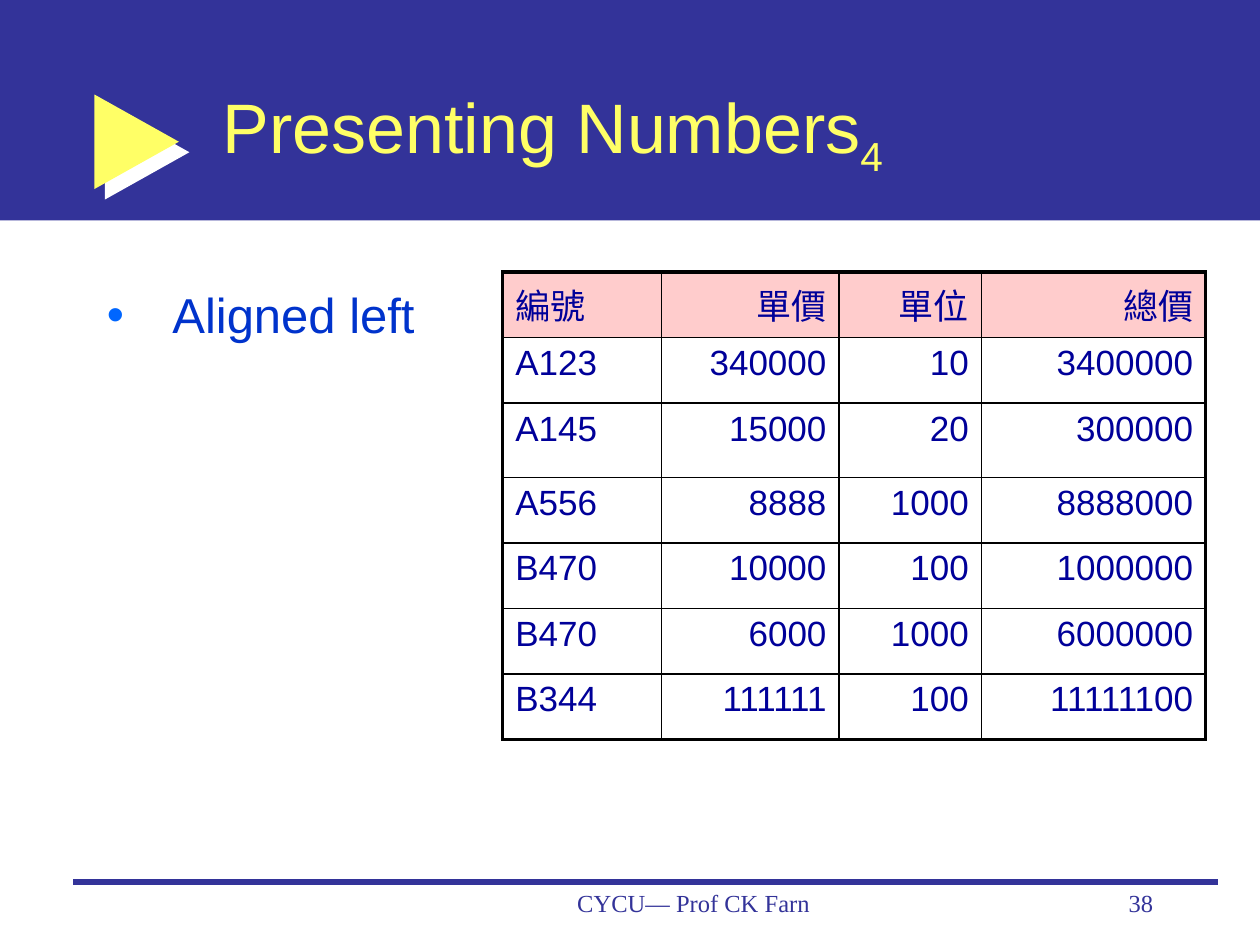
from lxml.etree import SubElement
from pptx import Presentation
from pptx.dml.color import RGBColor
from pptx.enum.shapes import MSO_CONNECTOR, MSO_SHAPE
from pptx.enum.text import MSO_ANCHOR, PP_ALIGN
from pptx.oxml.ns import qn
from pptx.util import Inches, Pt

NAVY = RGBColor(0x33, 0x33, 0x99)
YELLOW = RGBColor(0xFF, 0xFF, 0x66)
WHITE = RGBColor(0xFF, 0xFF, 0xFF)
BLACK = RGBColor(0, 0, 0)
PINK = RGBColor(0xFF, 0xCC, 0xCC)
CELL_BLUE = RGBColor(0, 0, 0x99)
BODY_BLUE = RGBColor(0, 0x33, 0xCC)
BULLET_BLUE = RGBColor(0, 0x66, 0xFF)

SANS = "Arial"
SERIF = "Times New Roman"
THICK, THIN = 2.25, 1

COLUMN_WIDTHS = [1.26, 1.41, 1.13, 1.78]
ROW_HEIGHTS = [0.52, 0.52, 0.59, 0.52, 0.52, 0.52, 0.52]
PRICE_ROWS = [
    ["編號", "單價", "單位", "總價"],
    ["A123", "340000", "10", "3400000"],
    ["A145", "15000", "20", "300000"],
    ["A556", "8888", "1000", "8888000"],
    ["B470", "10000", "100", "1000000"],
    ["B470", "6000", "1000", "6000000"],
    ["B344", "111111", "100", "11111100"],
]


def set_font(font, name, size, color):
    font.name = name
    font.size = Pt(size)
    font.color.rgb = color


def add_color(parent, color):
    fill = SubElement(parent, qn("a:solidFill"))
    SubElement(fill, qn("a:srgbClr"), val=str(color))


def add_text(slide, box, text, name, size, color, align=PP_ALIGN.LEFT):
    shape = slide.shapes.add_textbox(*map(Inches, box))
    frame = shape.text_frame
    frame.word_wrap = True
    frame.text = text
    paragraph = frame.paragraphs[0]
    paragraph.alignment = align
    set_font(paragraph.runs[0].font, name, size, color)
    return frame


def add_filled_shape(slide, kind, box, color):
    shape = slide.shapes.add_shape(kind, *map(Inches, box))
    shape.shadow.inherit = False
    shape.fill.solid()
    shape.fill.fore_color.rgb = color
    shape.line.fill.background()
    return shape


def add_header(slide, box):
    left, top, width, height = box
    add_filled_shape(slide, MSO_SHAPE.RECTANGLE, box, NAVY)
    arrow = add_filled_shape(slide, MSO_SHAPE.RIGHT_ARROW,
                             (left + 0.75, top + 0.75, 0.67, 0.75), YELLOW)
    arrow.adjustments[0] = 0.384
    arrow.adjustments[1] = 1
    effects = arrow.element.spPr.find(qn("a:effectLst"))
    shadow = SubElement(effects, qn("a:outerShdw"), blurRad="0", dist=str(Pt(8.5)),
                        dir=str(45 * 60000), algn="ctr", rotWithShape="0")
    SubElement(shadow, qn("a:srgbClr"), val=str(WHITE))

    frame = add_text(slide, (left + 1.67, top + 0.42, 7.58, 1.25),
                     "Presenting Numbers", SANS, 40, YELLOW)
    frame.vertical_anchor = MSO_ANCHOR.MIDDLE
    index = frame.paragraphs[0].add_run()
    index.text = "4"
    set_font(index.font, SANS, 40, YELLOW)
    index.font._element.set("baseline", "-25000")


def add_body(slide, box):
    frame = add_text(slide, box, "Aligned left", SANS, 28, BODY_BLUE)
    frame.margin_top = Inches(0.09)
    properties = frame.paragraphs[0]._p.get_or_add_pPr()
    properties.set("marL", str(Inches(0.52)))
    properties.set("indent", str(-Inches(0.52)))
    bullet_color = SubElement(properties, qn("a:buClr"))
    SubElement(bullet_color, qn("a:srgbClr"), val=str(BULLET_BLUE))
    SubElement(properties, qn("a:buFont"), typeface=SANS)
    SubElement(properties, qn("a:buChar"), char="•")


def set_borders(cell, widths):
    properties = cell._tc.get_or_add_tcPr()
    for position, (side, width) in enumerate(widths.items()):
        line = SubElement(properties, qn(f"a:{side}"), w=str(Pt(width)))
        add_color(line, BLACK)
        properties.insert(position, line)


def add_price_table(slide, box):
    row_count, column_count = len(PRICE_ROWS), len(COLUMN_WIDTHS)
    table = slide.shapes.add_table(row_count, column_count, *map(Inches, box)).table
    for column, width in zip(table.columns, COLUMN_WIDTHS):
        column.width = Inches(width)
    for row, height in zip(table.rows, ROW_HEIGHTS):
        row.height = Inches(height)
    for r, values in enumerate(PRICE_ROWS):
        for c, value in enumerate(values):
            cell = table.cell(r, c)
            cell.text = value
            paragraph = cell.text_frame.paragraphs[0]
            paragraph.alignment = PP_ALIGN.RIGHT if c else PP_ALIGN.LEFT
            set_font(paragraph.runs[0].font, SANS if r else SERIF, 20, CELL_BLUE)
            if r == 0:
                cell.fill.solid()
                cell.fill.fore_color.rgb = PINK
            else:
                cell.fill.background()
            set_borders(cell, {
                "lnL": THICK if c == 0 else THIN,
                "lnR": THICK if c == column_count - 1 else THIN,
                "lnT": THICK if r == 0 else THIN,
                "lnB": THICK if r == row_count - 1 else THIN,
            })


def add_footer(slide, box):
    left, top, width, height = box
    rule = slide.shapes.add_connector(MSO_CONNECTOR.STRAIGHT, Inches(left), Inches(top),
                                      Inches(left + width), Inches(top))
    rule.line.color.rgb = NAVY
    rule.line.width = Pt(3)
    SubElement(rule._element.spPr, qn("a:effectLst"))
    add_text(slide, (left + 3.34, top, 3.17, height), "CYCU— Prof CK Farn",
             SERIF, 14, NAVY, PP_ALIGN.CENTER)
    add_text(slide, (left + 6.59, top, 2.08, height), "38",
             SERIF, 14, NAVY, PP_ALIGN.RIGHT)


def main():
    presentation = Presentation()
    presentation.slide_width = Inches(10)
    presentation.slide_height = Inches(7.5)
    slide = presentation.slides.add_slide(presentation.slide_layouts[6])
    add_header(slide, (0, 0, 10, 1.75))
    add_footer(slide, (0.58, 7, 9.09, 0.5))
    add_price_table(slide, (3.99, 2.16, 5.58, 3.72))
    add_body(slide, (0.75, 2.17, 3.82, 4.59))
    presentation.save("out.pptx")


if __name__ == "__main__":
    main()
